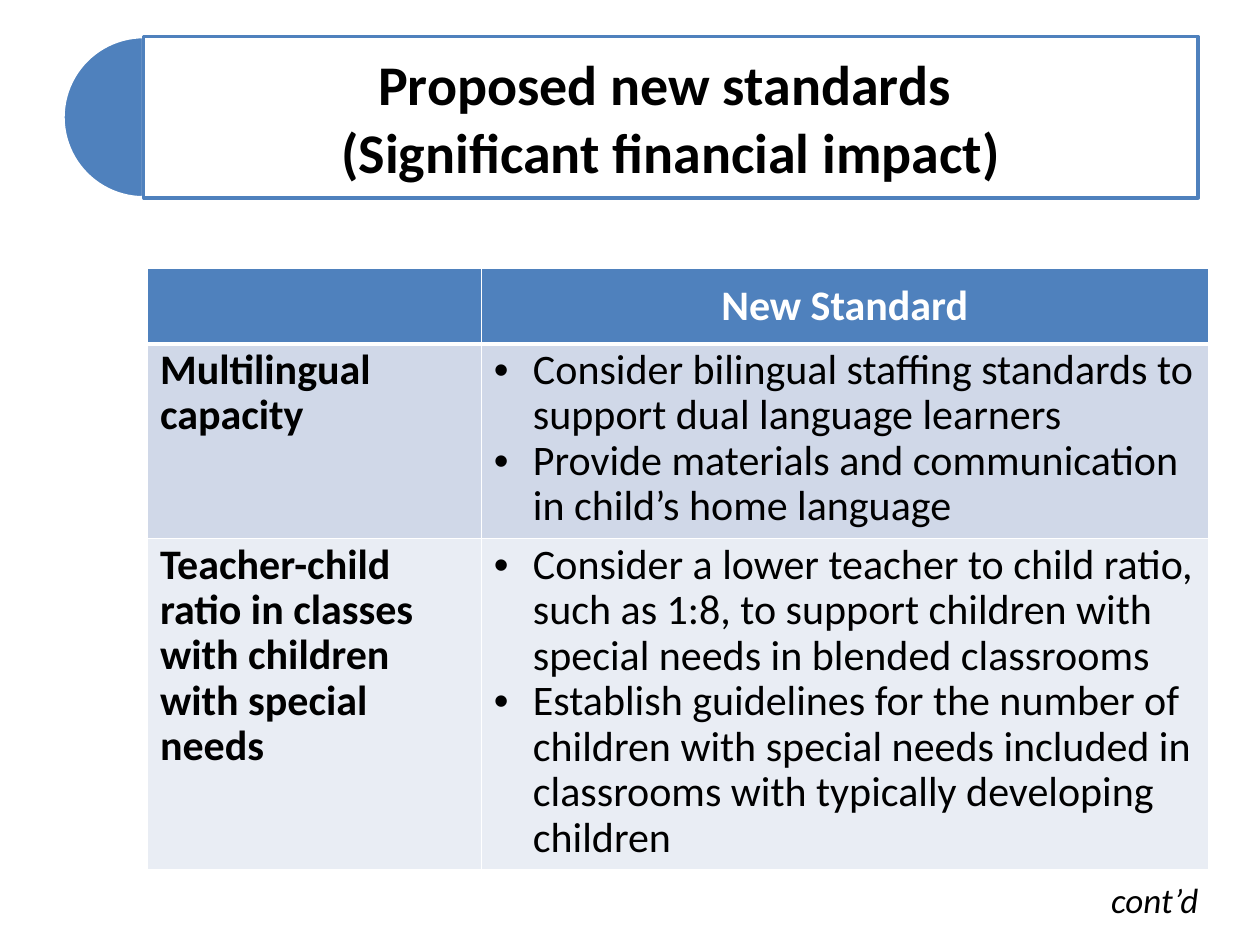
from dataclasses import dataclass
from typing import NamedTuple

from lxml import etree
from pptx import Presentation
from pptx.dml.color import RGBColor
from pptx.enum.shapes import MSO_SHAPE
from pptx.enum.text import MSO_ANCHOR, MSO_AUTO_SIZE, PP_ALIGN
from pptx.oxml.ns import qn
from pptx.util import Inches, Pt

PIE, RECT = MSO_SHAPE.PIE, MSO_SHAPE.RECTANGLE
TOP, MIDDLE = MSO_ANCHOR.TOP, MSO_ANCHOR.MIDDLE
LEFT, CENTER, RIGHT = PP_ALIGN.LEFT, PP_ALIGN.CENTER, PP_ALIGN.RIGHT
FIT_SHAPE, NO_FIT = MSO_AUTO_SIZE.SHAPE_TO_FIT_TEXT, MSO_AUTO_SIZE.NONE
TITLE_ONLY = 5
COLS, ROWS = 100, 75
UNIT = Inches(0.1)


@dataclass(frozen=True)
class Theme:
    font: str = "Calibri"
    accent: str = "4F81BD"
    white: str = "FFFFFF"
    black: str = "000000"
    bands: tuple = ("D0D8E8", "E9EDF4")
    title_size: int = 32
    table_size: int = 24
    note_size: int = 20
    line_spacing: int = 26


class Box(NamedTuple):
    col: float
    row: float
    cols: float
    rows: float

    def emu(self) -> list[int]:
        return [round(v * UNIT) for v in self]


class Standard(NamedTuple):
    topic: str
    points: tuple
    rows: float


THEME = Theme()
BANNER = Box(11.4, 2.9, 83.7, 12.8)
DISC = Box(5, 2.9, 12.8, 12.8)
TABLE = Box(11.7, 21.3, 84.2, 47.7)
NOTE = Box(86.1, 69.2, 10, 4.4)
TABLE_COLS = (26.5, 57.7)
HEADER_ROWS = 6
STANDARDS = (
    Standard("Multilingual capacity", (
        "Consider bilingual staffing standards to support dual language learners",
        "Provide materials and communication in child’s home language"), 15.4),
    Standard("Teacher-child ratio in classes with children with special needs", (
        "Consider a lower teacher to child ratio, such as 1:8, to support "
        "children with special needs in blended classrooms",
        "Establish guidelines for the number of children with special needs "
        "included in classrooms with typically developing children"), 26.3),
)


def rgb(color: str) -> RGBColor:
    return RGBColor.from_string(color)


def write(tf, lines, size: int, color: str, align=LEFT, bold=False, italic=False) -> None:
    tf.text = "\n".join(lines)
    for p in tf.paragraphs:
        p.alignment = align
        for r in p.runs:
            r.font.name, r.font.size = THEME.font, Pt(size)
            r.font.bold, r.font.italic = bold, italic
            r.font.color.rgb = rgb(color)


def add_shape(slide, kind, box: Box, fill: str, line: str):
    sp = slide.shapes.add_shape(kind, *box.emu())
    sp.shadow.inherit = False
    sp.fill.solid()
    sp.fill.fore_color.rgb = rgb(fill)
    sp.line.color.rgb = rgb(line)
    sp.line.width = Pt(2)
    return sp


def add_banner(slide) -> None:
    disc = add_shape(slide, PIE, DISC, THEME.accent, THEME.white)
    disc.adjustments[0], disc.adjustments[1] = 54, 162
    panel = add_shape(slide, RECT, BANNER, THEME.white, THEME.accent)
    color = panel.fill._xPr.find(qn("a:solidFill"))[0]
    etree.SubElement(color, qn("a:alpha"), val="90000")

    title = slide.shapes.title
    title.left, title.top, title.width, title.height = BANNER.emu()
    tf = title.text_frame
    tf.word_wrap, tf.auto_size, tf.vertical_anchor = True, NO_FIT, MIDDLE
    tf.margin_left = tf.margin_right = tf.margin_top = tf.margin_bottom = Inches(0.13)
    write(tf, ("Proposed new standards ", "(Significant financial impact)"),
          THEME.title_size, THEME.black, CENTER, bold=True)
    slide.shapes._spTree.append(title._element)


def style_cell(cell, fill: str, top=1, bottom=1) -> None:
    tcPr = cell._tc.get_or_add_tcPr()
    for side, width in (("L", 1), ("R", 1), ("T", top), ("B", bottom)):
        ln = etree.SubElement(tcPr, qn(f"a:ln{side}"), w=str(Pt(width)))
        solid = etree.SubElement(ln, qn("a:solidFill"))
        etree.SubElement(solid, qn("a:srgbClr"), val=THEME.white)
    cell.fill.solid()
    cell.fill.fore_color.rgb = rgb(fill)


def add_bullet(p) -> None:
    pPr = p._p.get_or_add_pPr()
    pPr.set("marL", str(Inches(0.31)))
    pPr.set("indent", str(-Inches(0.31)))
    etree.SubElement(pPr, qn("a:buFont"), typeface="Arial")
    etree.SubElement(pPr, qn("a:buChar"), char="•")


def fill_body(cell, lines, anchor, bold=False, bullets=False) -> None:
    cell.vertical_anchor = anchor
    write(cell.text_frame, lines, THEME.table_size, THEME.black, bold=bold)
    for p in cell.text_frame.paragraphs:
        p.line_spacing = Pt(THEME.line_spacing)
        if bullets:
            add_bullet(p)


def add_standards(slide) -> None:
    table = slide.shapes.add_table(len(STANDARDS) + 1, len(TABLE_COLS), *TABLE.emu()).table
    for column, width in zip(table.columns, TABLE_COLS):
        column.width = round(width * UNIT)
    heights = (HEADER_ROWS, *(s.rows for s in STANDARDS))
    for row, height in zip(table.rows, heights):
        row.height = round(height * UNIT)

    for cell in table.rows[0].cells:
        style_cell(cell, THEME.accent, bottom=3)
    header = table.cell(0, 1)
    header.vertical_anchor = MIDDLE
    write(header.text_frame, ("New Standard",), THEME.table_size, THEME.white, CENTER, bold=True)

    for i, standard in enumerate(STANDARDS, 1):
        topic, points = table.cell(i, 0), table.cell(i, 1)
        for cell in (topic, points):
            style_cell(cell, THEME.bands[i - 1], top=3 if i == 1 else 1)
        fill_body(topic, (standard.topic,), TOP, bold=True)
        fill_body(points, standard.points, MIDDLE, bullets=True)


def add_note(slide) -> None:
    tf = slide.shapes.add_textbox(*NOTE.emu()).text_frame
    tf.word_wrap, tf.auto_size = True, FIT_SHAPE
    write(tf, ("cont’d",), THEME.note_size, THEME.black, RIGHT, italic=True)


def main() -> None:
    prs = Presentation()
    prs.slide_width, prs.slide_height = COLS * UNIT, ROWS * UNIT
    slide = prs.slides.add_slide(prs.slide_layouts[TITLE_ONLY])
    add_standards(slide)
    add_banner(slide)
    add_note(slide)
    prs.save("out.pptx")


if __name__ == "__main__":
    main()
